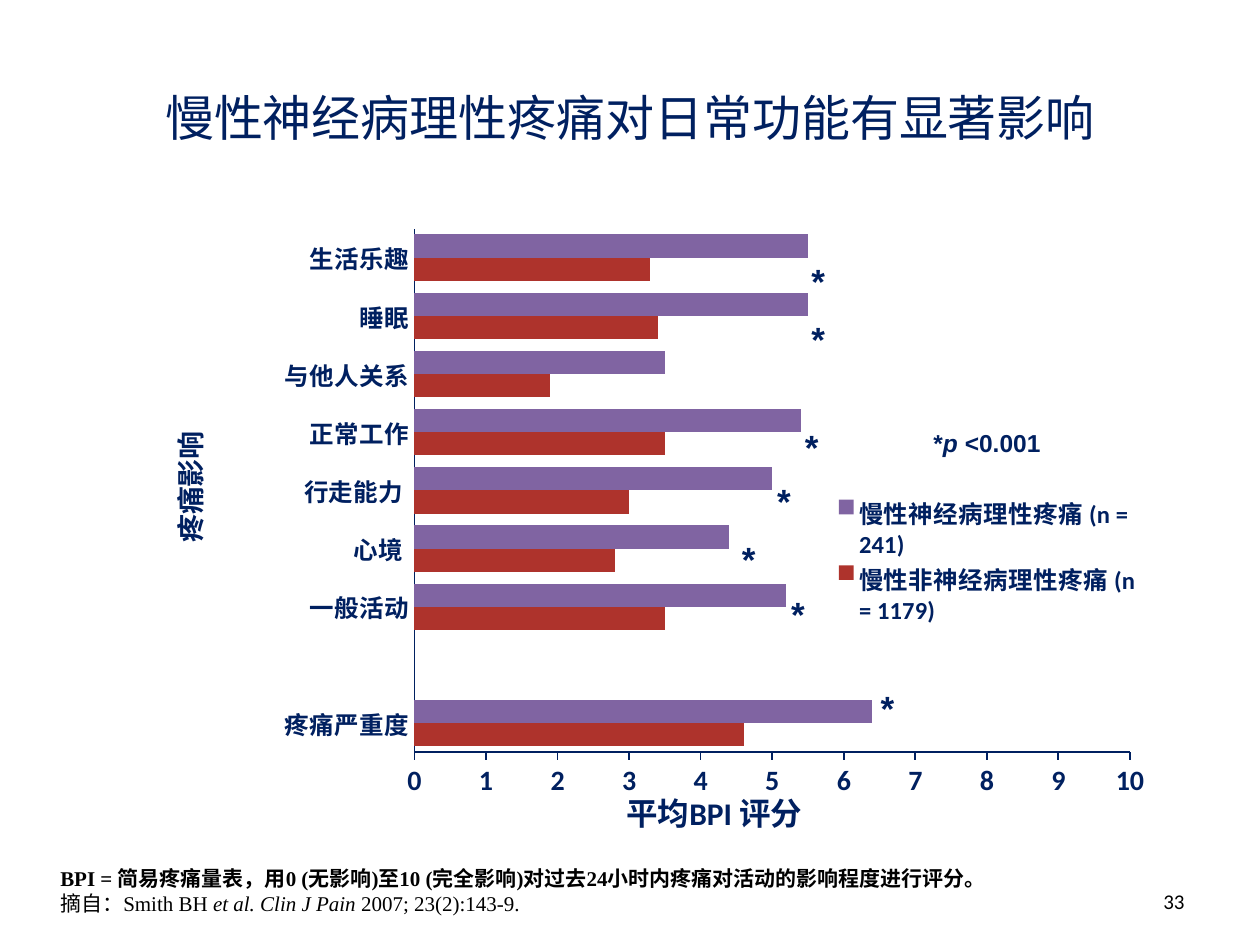
from lxml import etree
from pptx import Presentation
from pptx import util as u
from pptx.chart import data as chart_data
from pptx.dml import color
from pptx.enum import chart as ec, text as et
from pptx.oxml import ns

COLORS = {"navy": "002060", "black": "000000", "red": "AE332C", "purple": "8064A2"}


class SlideBuilder:
    """Holds the slide and its style, and adds each kind of element."""

    def __init__(self, presentation):
        self.slide = presentation.slides.add_slide(presentation.slide_layouts[6])

    def rgb(self, name):
        return color.RGBColor.from_string(COLORS[name])

    def style(self, font, size, name="navy", bold=True, face="Calibri"):
        font.size, font.bold, font.name = u.Pt(size), bold, face
        font.color.rgb = self.rgb(name)

    def text(self, box, paragraphs, size, name="navy", face="Arial",
             align=et.PP_ALIGN.LEFT, anchor=et.MSO_ANCHOR.TOP, wrap=True):
        """Each paragraph is a list of (text, bold, italic) runs."""
        shape = self.slide.shapes.add_textbox(*map(u.Inches, box))
        frame = shape.text_frame
        frame.word_wrap, frame.vertical_anchor = wrap, anchor
        for index, runs in enumerate(paragraphs):
            paragraph = frame.add_paragraph() if index else frame.paragraphs[0]
            paragraph.alignment = align
            for words, bold, italic in runs:
                run = paragraph.add_run()
                run.text = words
                self.style(run.font, size, name, bold, face)
                run.font.italic = italic
        return shape

    def layout(self, parent, index, inner=False, **box):
        """Place the plot area or legend by fractions of the chart."""
        for old in parent.findall(ns.qn("c:layout")):
            parent.remove(old)
        layout = etree.Element(ns.qn("c:layout"))
        manual = etree.SubElement(layout, ns.qn("c:manualLayout"))
        settings = {"layoutTarget": "inner"} if inner else {}
        settings.update(xMode="edge", yMode="edge", **box)
        for tag, value in settings.items():
            etree.SubElement(manual, ns.qn("c:" + tag)).set("val", str(value))
        parent.insert(index, layout)

    def axis(self, axis, size, tick):
        axis.has_major_gridlines = False
        axis.major_tick_mark, axis.minor_tick_mark = tick, ec.XL_TICK_MARK.NONE
        self.style(axis.tick_labels.font, size)
        axis.format.line.color.rgb = self.rgb("navy")
        axis.format.line.width = u.Pt(1)

    def bar_chart(self, box, categories, series, axis_title):
        data = chart_data.CategoryChartData()
        data.categories = categories
        for name, values, _ in series:
            data.add_series(name, values)
        chart = self.slide.shapes.add_chart(
            ec.XL_CHART_TYPE.BAR_CLUSTERED, *map(u.Inches, box), data).chart
        self.style(chart.font, 10, "black", face="Arial")
        chart.has_title = False

        # Bars
        plot = chart.plots[0]
        plot.gap_width, plot.overlap, plot.vary_by_categories = 50, 0, False
        for bars, (_, _, fill) in zip(plot.series, series):
            bars.format.fill.solid()
            bars.format.fill.fore_color.rgb = self.rgb(fill)
        plot_area = chart._chartSpace.chart.plotArea
        self.layout(plot_area, 0, True, x=0.31, y=0.013, w=0.631, h=0.84)

        # Axes
        self.axis(chart.category_axis, 14, ec.XL_TICK_MARK.NONE)
        values = chart.value_axis
        self.axis(values, 16, ec.XL_TICK_MARK.OUTSIDE)
        values.minimum_scale, values.maximum_scale, values.major_unit = 0, 10, 1
        frame = values.axis_title.text_frame
        frame.text = axis_title
        self.style(frame.paragraphs[0].runs[0].font, 18)

        # Legend
        chart.has_legend = True
        legend = chart.legend
        legend.position = ec.XL_LEGEND_POSITION.RIGHT
        legend.include_in_layout = False
        self.style(legend.font, 14)
        self.layout(legend._element, 1, x=0.68, y=0.44, w=0.27, h=0.21)


def main():
    presentation = Presentation()
    presentation.slide_width, presentation.slide_height = u.Inches(10), u.Inches(7.5)
    builder = SlideBuilder(presentation)
    center, middle = et.PP_ALIGN.CENTER, et.MSO_ANCHOR.MIDDLE

    # Title
    builder.text((0.5, 0.3, 9, 1.25),
                 [[("慢性神经病理性疼痛对日常功能有显著影响", False, False)]],
                 28, face="Times New Roman", align=center, anchor=middle)

    # Scores for pain severity and interference
    categories = ["疼痛严重度", "", "一般活动", "心境 ", "行走能力 ",
                  "正常工作", "与他人关系", "睡眠", "生活乐趣"]
    series = [
        ("慢性非神经病理性疼痛 (n = 1179)",
         [4.6, None, 3.5, 2.8, 3, 3.5, 1.9, 3.4, 3.3], "red"),
        ("慢性神经病理性疼痛 (n = 241)",
         [6.4, None, 5.2, 4.4, 5, 5.4, 3.5, 5.5, 5.5], "purple"),
    ]
    builder.bar_chart((0.5, 1.75, 9, 4.95), categories, series, "平均BPI 评分")

    # Vertical axis caption
    caption = builder.text((1.33, 2.34, 0.47, 3.05), [[("疼痛影响", True, False)]],
                           16, align=center)
    caption.rotation = 180
    caption.text_frame._txBody.bodyPr.set("vert", "vert")

    # Significance marks
    for left, top in [(6.34, 2.01), (6.34, 2.47), (6.29, 3.33), (6.07, 3.76),
                      (5.79, 4.22), (6.18, 4.65), (6.89, 5.4)]:
        builder.text((left, top, 0.31, 0.44), [[("*", True, False)]], 20, wrap=False)
    builder.text((7.31, 3.35, 1.06, 0.34),
                 [[("*", True, False), ("p ", True, True), ("<0.001", True, False)]],
                 14, wrap=False)

    # Footnote and page number
    builder.text((0.38, 6.82, 8.79, 0.5), [
        [("BPI = 简易疼痛量表，用0 (无影响)至10 (完全影响)"
          "对过去24小时内疼痛对活动的影响程度进行评分。", True, False)],
        [("摘自：Smith BH ", False, False), ("et al. Clin J Pain ", False, True),
         ("2007; 23(2):143-9.", False, False)],
    ], 12, "black", "Times New Roman")
    builder.text((7.17, 6.95, 2.33, 0.4), [[("33", False, False)]], 12, "black",
                 "Calibri", et.PP_ALIGN.RIGHT, middle)

    presentation.save("out.pptx")


if __name__ == "__main__":
    main()
